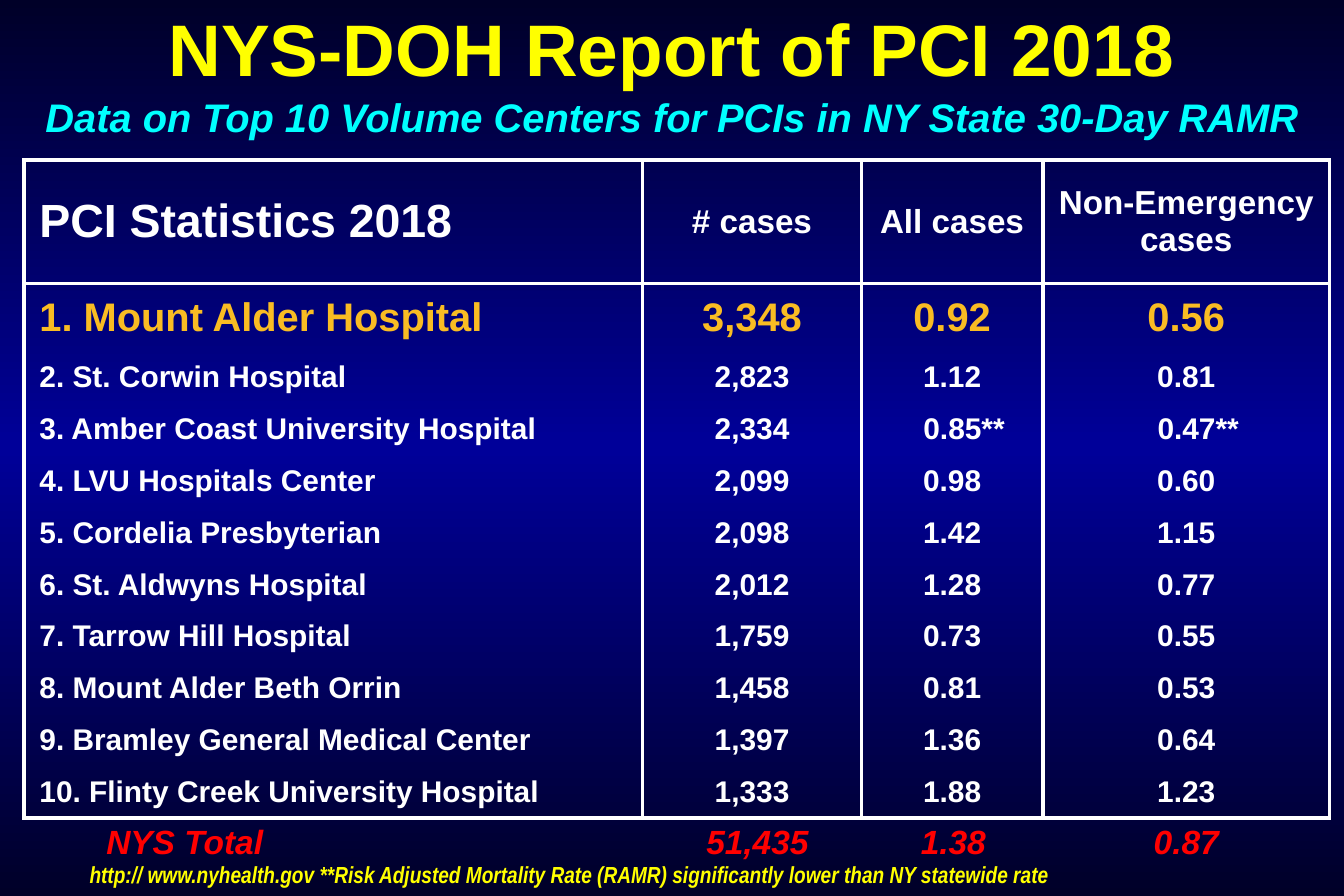
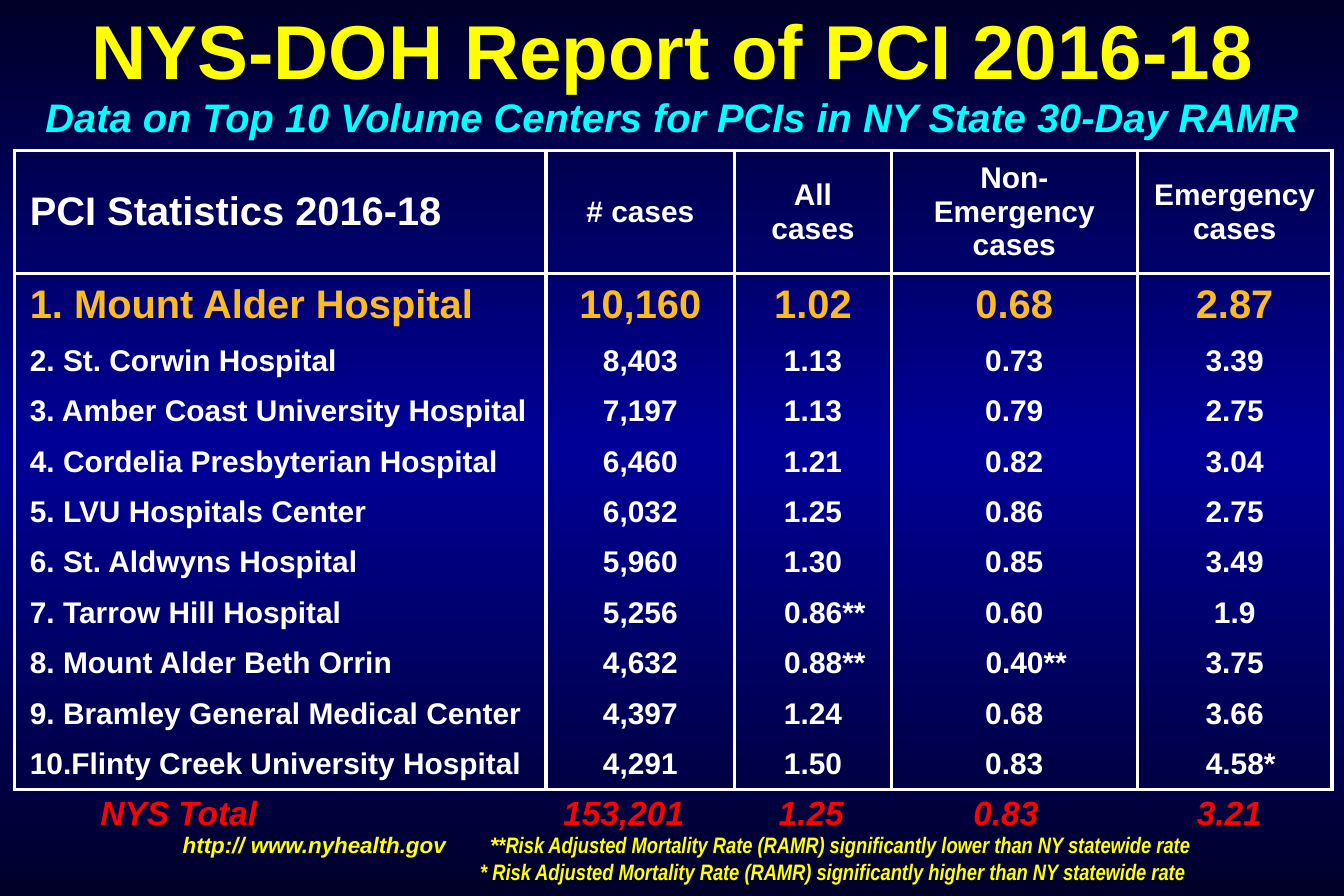
import copy

import pptx
import pptx.dml.color
import pptx.enum.text
import pptx.oxml.ns
import pptx.util
from lxml import etree

Inches = pptx.util.Inches
Pt = pptx.util.Pt
RGBColor = pptx.dml.color.RGBColor
ALIGN = pptx.enum.text.PP_ALIGN
ANCHOR = pptx.enum.text.MSO_ANCHOR
qn = pptx.oxml.ns.qn

NIGHT = RGBColor(0x00, 0x00, 0x28)
BLUE = RGBColor(0x00, 0x00, 0x99)
YELLOW = RGBColor(0xFF, 0xFF, 0x00)
CYAN = RGBColor(0x00, 0xFF, 0xFF)
WHITE = RGBColor(0xFF, 0xFF, 0xFF)
GOLD = RGBColor(0xF9, 0xBC, 0x23)
RED = RGBColor(0xFF, 0x00, 0x00)

SANS = "Arial"
NARROW = "Arial Narrow"
PAGE_WIDTH = 11.25
HEADER_HEIGHT = 1.03
CELL_INSET = 0.13
STAR_WIDTH = 0.1
SUBTITLE = "Data on Top 10 Volume Centers for PCIs in NY State 30-Day RAMR"

ROWS_2018 = [
    ["PCI Statistics 2018", "# cases", "All cases", "Non-Emergency cases"],
    ["1. Mount Alder Hospital", "3,348", "0.92", "0.56"],
    ["2. St. Corwin Hospital", "2,823", "1.12", "0.81"],
    ["3. Amber Coast University Hospital", "2,334", "0.85**", "0.47**"],
    ["4. LVU Hospitals Center", "2,099", "0.98", "0.60"],
    ["5. Cordelia Presbyterian", "2,098", "1.42", "1.15"],
    ["6. St. Aldwyns Hospital", "2,012", "1.28", "0.77"],
    ["7. Tarrow Hill Hospital", "1,759", "0.73", "0.55"],
    ["8. Mount Alder Beth Orrin", "1,458", "0.81", "0.53"],
    ["9. Bramley General Medical Center", "1,397", "1.36", "0.64"],
    ["10. Flinty Creek University Hospital", "1,333", "1.88", "1.23"],
]
ROWS_2016_18 = [
    ["PCI Statistics 2016-18", "# cases", "All cases", "Non-Emergency cases",
     "Emergency cases"],
    ["1. Mount Alder Hospital", "10,160", "1.02", "0.68", "2.87"],
    ["2. St. Corwin Hospital", "8,403", "1.13", "0.73", "3.39"],
    ["3. Amber Coast University Hospital", "7,197", "1.13", "0.79", "2.75"],
    ["4. Cordelia Presbyterian Hospital", "6,460", "1.21", "0.82", "3.04"],
    ["5. LVU Hospitals Center", "6,032", "1.25", "0.86", "2.75"],
    ["6. St. Aldwyns Hospital", "5,960", "1.30", "0.85", "3.49"],
    ["7. Tarrow Hill Hospital", "5,256", "0.86**", "0.60", "1.9"],
    ["8. Mount Alder Beth Orrin", "4,632", "0.88**", "0.40**", "3.75"],
    ["9. Bramley General Medical Center", "4,397", "1.24", "0.68", "3.66"],
    ["10.Flinty Creek University Hospital", "4,291", "1.50", "0.83", "4.58*"],
]


def set_background(master):
    """Vertical gradient, dark at both ends, shared by every slide."""
    fill = master.background.fill
    fill.gradient()
    fill.gradient_angle = 270
    stop_list = master.element.find(".//" + qn("a:gsLst"))
    stop_list.insert(1, copy.deepcopy(stop_list[0]))
    stops = zip(fill.gradient_stops, (0, 0.5, 1), (NIGHT, BLUE, NIGHT))
    for stop, position, color in stops:
        stop.position = position
        stop.color.rgb = color


def set_font(font, size, color, name=SANS, italic=False):
    font.name = name
    font.size = Pt(size)
    font.bold = True
    font.italic = italic
    font.color.rgb = color


def set_tabs(para, positions, alignment):
    tabs = etree.SubElement(para._p.get_or_add_pPr(), qn("a:tabLst"))
    for position in positions:
        tab = etree.SubElement(tabs, qn("a:tab"))
        tab.set("pos", str(Inches(position)))
        tab.set("algn", alignment)


def set_frame(frame, side=0.13, top=0.07):
    frame.word_wrap = True
    frame.auto_size = pptx.enum.text.MSO_AUTO_SIZE.NONE
    frame.vertical_anchor = ANCHOR.TOP
    frame.margin_left = frame.margin_right = Inches(side)
    frame.margin_top = frame.margin_bottom = Inches(top)


def add_text_box(page, left, top, width, height, side=0.13, inset=0.07):
    box = page.shapes.add_textbox(
        Inches(left), Inches(top), Inches(width), Inches(height))
    set_frame(box.text_frame, side, inset)
    return box.text_frame


def add_headings(page, title, size):
    # Title
    box = page.shapes.title
    box.left, box.top = Inches(0), Inches(-0.04)
    box.width, box.height = Inches(PAGE_WIDTH), Inches(0.9)
    set_frame(box.text_frame)
    para = box.text_frame.paragraphs[0]
    para.text = title
    para.alignment = ALIGN.CENTER
    set_font(para.font, size, YELLOW)
    # Subtitle
    para = add_text_box(page, 0, 0.78, PAGE_WIDTH, 0.46).paragraphs[0]
    para.text = SUBTITLE
    para.alignment = ALIGN.CENTER
    para.line_spacing = 0.8
    set_font(para.font, 24, CYAN, italic=True)


def set_borders(cell, drawn):
    """White line on each side named in drawn, none on the others."""
    properties = cell._tc.get_or_add_tcPr()
    for side in "LRTB":
        line = etree.SubElement(properties, qn("a:ln" + side))
        line.set("w", str(Pt(2.25)))
        if side in drawn:
            fill = etree.SubElement(line, qn("a:solidFill"))
            etree.SubElement(fill, qn("a:srgbClr")).set("val", str(WHITE))
        else:
            etree.SubElement(line, qn("a:noFill"))


def add_statistics(page, left, top, height, widths, rows, first_height,
                   header_sizes):
    frame = page.shapes.add_table(
        len(rows), len(widths), Inches(left), Inches(top),
        Inches(sum(widths)), Inches(height))
    table = frame.table
    table.first_row = table.horz_banding = False
    for column, width in zip(table.columns, widths):
        column.width = Inches(width)
    body_height = (height - HEADER_HEIGHT - first_height) / (len(rows) - 2)
    heights = [HEADER_HEIGHT, first_height] + [body_height] * (len(rows) - 2)

    for index, values in enumerate(rows):
        table.rows[index].height = Inches(heights[index])
        sides = {0: "LRTB", 1: "LRT", len(rows) - 1: "LRB"}.get(index, "LR")
        for column, value in enumerate(values):
            cell = table.cell(index, column)
            set_borders(cell, sides)
            cell.fill.background()
            cell.vertical_anchor = ANCHOR.MIDDLE
            # Stars hang to the right, so that the figures stay aligned
            cell.margin_left = Inches(CELL_INSET + STAR_WIDTH * value.count("*"))
            cell.margin_right = Inches(CELL_INSET)
            cell.margin_top = cell.margin_bottom = Inches(0.06)
            para = cell.text_frame.paragraphs[0]
            para.text = value
            para.alignment = ALIGN.CENTER if column else ALIGN.LEFT
            if index == 0:
                set_font(para.font, header_sizes[min(column, 1)], WHITE)
            elif index == 1:
                set_font(para.font, 24, GOLD)
            else:
                set_font(para.font, 18, WHITE)


def add_totals(page, left, top, totals, centres):
    """State totals, each centred on its place across the slide."""
    frame = add_text_box(page, left, top, PAGE_WIDTH - left, 0.48, side=0)
    para = frame.paragraphs[0]
    set_tabs(para, [centre - left for centre in centres], "ctr")
    para.text = "\t".join(["NYS Total"] + totals)
    set_font(para.font, 20.2, RED, italic=True)


def build_2018(page):
    add_headings(page, "NYS-DOH Report of PCI 2018", 44)
    add_statistics(page, 0.2, 1.34, 5.51, [5.18, 1.83, 1.52, 2.4], ROWS_2018,
                   0.57, (28, 20))
    add_totals(page, 0.89, 6.8, ["51,435", "1.38", "0.87"], [6.34, 7.98, 9.93])
    # Source and footnote
    para = add_text_box(page, 0, 7.14, 9.54, 0.35, 0.12, 0.06).paragraphs[0]
    para.text = ("http:// www.nyhealth.gov **Risk Adjusted Mortality Rate (RAMR) "
                 "significantly lower than NY statewide rate")
    para.alignment = ALIGN.CENTER
    set_font(para.font, 14, YELLOW, NARROW, italic=True)


def build_2016_18(page):
    add_headings(page, "NYS-DOH Report of PCI 2016-18", 46)
    add_statistics(page, 0.12, 1.26, 5.35, [4.45, 1.58, 1.31, 2.06, 1.63],
                   ROWS_2016_18, 0.52, (24, 18))
    add_totals(page, 0.84, 6.56, ["153,201", "1.25", "0.83", "3.21"],
               [5.22, 6.79, 8.42, 10.29])
    # Source and footnotes: tab position, then text and font of each run
    lines = [
        (2.57, [("http:// www.nyhealth.gov\t*", SANS),
                ("*Risk Adjusted Mortality Rate (RAMR) significantly lower "
                 "than NY statewide rate", NARROW)]),
        (2.49, [("\t* Risk Adjusted Mortality Rate (RAMR) significantly higher "
                 "than NY statewide rate", NARROW)]),
    ]
    frame = add_text_box(page, 1.53, 6.89, 9.5, 0.59, side=0)
    for index, (tab, runs) in enumerate(lines):
        para = frame.add_paragraph() if index else frame.paragraphs[0]
        set_tabs(para, [tab], "l")
        set_font(para.font, 13.5, YELLOW, NARROW, italic=True)
        for text, name in runs:
            span = para.add_run()
            span.text = text
            span.font.name = name


def main():
    deck = pptx.Presentation()
    deck.slide_width, deck.slide_height = Inches(PAGE_WIDTH), Inches(7.5)
    set_background(deck.slide_master)
    title_only = deck.slide_layouts[5]
    for build in (build_2018, build_2016_18):
        build(deck.slides.add_slide(title_only))
    deck.save("out.pptx")


if __name__ == "__main__":
    main()
